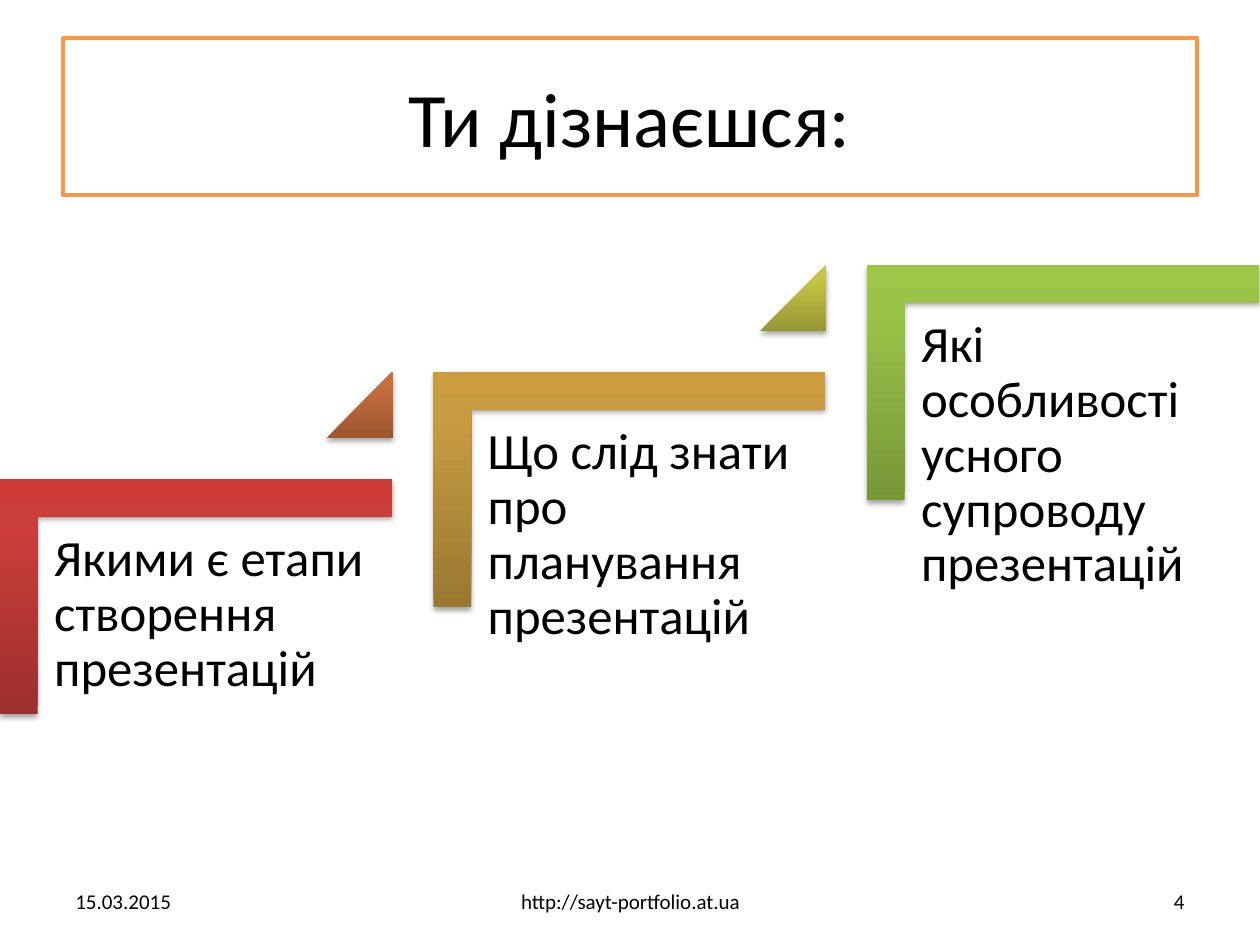
from copy import deepcopy
from dataclasses import dataclass

from lxml import etree
from pptx import Presentation
from pptx.dml.color import RGBColor
from pptx.enum.shapes import MSO_SHAPE
from pptx.enum.text import MSO_ANCHOR, PP_ALIGN
from pptx.oxml.ns import qn
from pptx.util import Emu, Inches, Pt

CORNER, TRIANGLE = MSO_SHAPE.CORNER, MSO_SHAPE.ISOSCELES_TRIANGLE
TOP, MIDDLE = MSO_ANCHOR.TOP, MSO_ANCHOR.MIDDLE
LEFT, CENTER, RIGHT = PP_ALIGN.LEFT, PP_ALIGN.CENTER, PP_ALIGN.RIGHT

WIDTH, HEIGHT = Inches(10), Inches(7.5)
COL, ROW = WIDTH / 100, HEIGHT / 75


@dataclass(frozen=True)
class Theme:
    font: str = "Calibri"
    ink: str = "000000"
    paper: str = "FFFFFF"
    frame: str = "F79646"
    title: int = 44
    body: int = 29
    small: int = 12


@dataclass(frozen=True)
class Box:
    """Left, top, width and height in grid columns and rows."""
    x: float
    y: float
    w: float
    h: float

    def emu(self) -> list[Emu]:
        return [Emu(round(n * unit)) for n, unit in
                zip((self.x, self.y, self.w, self.h), (COL, ROW, COL, ROW))]


@dataclass(frozen=True)
class Step:
    """A stair with its shades, and those of the triangle that follows."""
    text: str
    bar: tuple[str, str, str]
    tip: tuple[str, str, str] | None = None


@dataclass(frozen=True)
class Note:
    text: str
    box: Box
    align: PP_ALIGN


THEME = Theme()
STEPS = [
    Step("Якими є етапи створення презентацій",
         ("9C2F2D", "CB3E3A", "CE3B37"), ("9B552F", "C96E3D", "CD6E3B")),
    Step("Що слід знати про планування презентацій",
         ("997832", "C79C41", "CB9D3F"), ("989835", "C5C545", "C8C942")),
    Step("Які особливості усного супроводу презентацій",
         ("779737", "9BC348", "9DC746")),
]
NOTES = [
    Note("15.03.2015", Box(5, 69.5, 23.3, 4), LEFT),
    Note("http://sayt-portfolio.at.ua", Box(34.2, 69.5, 31.7, 4), CENTER),
    Note("4", Box(71.7, 69.5, 23.3, 4), RIGHT),
]
FIRST_Y = 38
RUN, RISE = 34.4, 8.5
SPAN, DROP = 31.1, 18.7
INDENT, TIP = 3.1, 5.3


def write(frame, text: str, size: int, align=LEFT, anchor=TOP) -> None:
    frame.word_wrap = True
    frame.vertical_anchor = anchor
    para = frame.paragraphs[0]
    para.alignment = align
    run = para.add_run()
    run.text = text
    run.font.name = THEME.font
    run.font.size = Pt(size)
    run.font.color.rgb = RGBColor.from_string(THEME.ink)


def add_text(slide, box: Box, text: str, size: int, align=LEFT, anchor=TOP):
    frame = slide.shapes.add_textbox(*box.emu()).text_frame
    write(frame, text, size, align, anchor)
    return frame


def shade(shape, hues: tuple[str, str, str]) -> None:
    """Fill upwards from dark to bright, whatever the shape's rotation."""
    fill = shape.fill
    fill.gradient()
    fill.gradient_angle = 90
    grad = shape._element.spPr.find(qn("a:gradFill"))
    grad.set("rotWithShape", "0")
    stops = grad.find(qn("a:gsLst"))
    stops.append(deepcopy(stops[0]))
    for stop, hue, place in zip(fill.gradient_stops, hues, (0, 0.8, 1)):
        stop.color.rgb = RGBColor.from_string(hue)
        stop.position = place


def cast(shape) -> None:
    """Give the shape a soft shadow straight below it."""
    shape.shadow.inherit = False
    effects = shape._element.spPr.find(qn("a:effectLst"))
    outer = etree.SubElement(
        effects, qn("a:outerShdw"), blurRad=str(Pt(3.1)), dist=str(Pt(1.8)),
        dir="5400000", rotWithShape="0")
    hue = etree.SubElement(outer, qn("a:srgbClr"), val=THEME.ink)
    etree.SubElement(hue, qn("a:alpha"), val="35000")


def add_block(slide, kind, box: Box, hues: tuple[str, str, str]):
    shape = slide.shapes.add_shape(kind, *box.emu())
    shape.line.fill.background()
    shade(shape, hues)
    cast(shape)
    return shape


def add_step(slide, step: Step, rank: int) -> None:
    x, y = rank * RUN, FIRST_Y - rank * RISE
    shift = (SPAN - DROP) / 2
    bar = add_block(slide, CORNER, Box(x + shift, y - shift, DROP, SPAN), step.bar)
    bar.rotation = 90
    bar.adjustments[0] = bar.adjustments[1] = 0.16
    frame = add_text(slide, Box(x + INDENT, y + INDENT, 28.1, 24.6),
                     step.text, THEME.body)
    frame.margin_left = frame.margin_right = Inches(0.12)
    frame.margin_top = frame.margin_bottom = Inches(0.12)
    frame.paragraphs[0].line_spacing = 0.9
    if step.tip:
        tip = add_block(slide, TRIANGLE,
                        Box(x + SPAN - TIP + 0.1, y - RISE, TIP, TIP), step.tip)
        tip.adjustments[0] = 1


def add_title(slide, text: str) -> None:
    title = slide.shapes.title
    title.left, title.top, title.width, title.height = Box(5, 3, 90, 12.5).emu()
    title.fill.solid()
    title.fill.fore_color.rgb = RGBColor.from_string(THEME.paper)
    title.line.color.rgb = RGBColor.from_string(THEME.frame)
    title.line.width = Pt(2)
    write(title.text_frame, text, THEME.title, CENTER, MIDDLE)


def main() -> None:
    deck = Presentation()
    deck.slide_width, deck.slide_height = WIDTH, HEIGHT
    slide = deck.slides.add_slide(deck.slide_layouts[5])
    add_title(slide, "Ти дізнаєшся:")
    for rank, step in enumerate(STEPS):
        add_step(slide, step, rank)
    for note in NOTES:
        add_text(slide, note.box, note.text, THEME.small, note.align, MIDDLE)
    deck.save("out.pptx")


if __name__ == "__main__":
    main()
